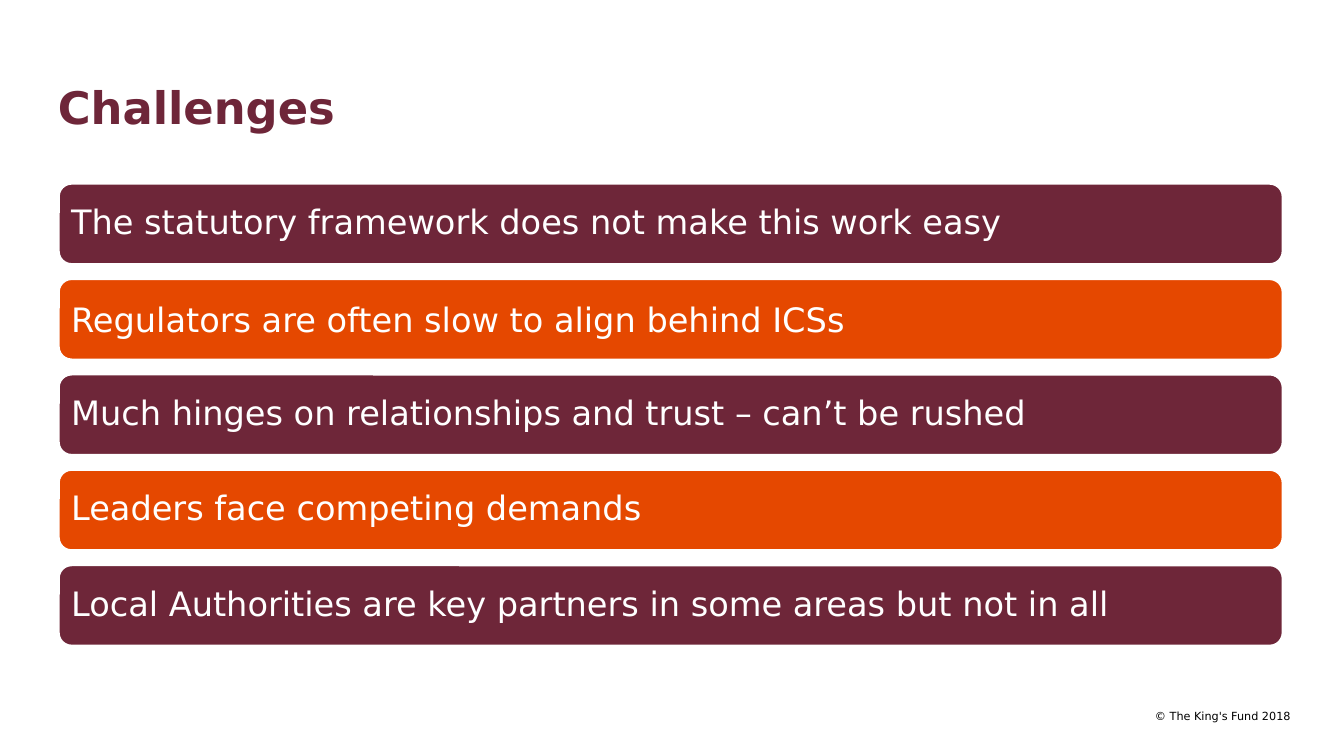
"""Build the Challenges slide with five alternating bars."""
from pptx import Presentation
from pptx.dml.color import RGBColor
from pptx.enum.shapes import MSO_SHAPE
from pptx.enum.text import MSO_ANCHOR, MSO_AUTO_SIZE, PP_ALIGN
from pptx.util import Pt

ROUND = MSO_SHAPE.ROUNDED_RECTANGLE
MIDDLE, TOP = MSO_ANCHOR.MIDDLE, MSO_ANCHOR.TOP
LEFT, RIGHT = PP_ALIGN.LEFT, PP_ALIGN.RIGHT
FIXED = MSO_AUTO_SIZE.NONE
PLUM, ORANGE, WHITE, BLACK = "6E2639", "E54800", "FFFFFF", "000000"
ITEMS = [
    "The statutory framework does not make this work easy",
    "Regulators are often slow to align behind ICSs",
    "Much hinges on relationships and trust – can’t be rushed",
    "Leaders face competing demands",
    "Local Authorities are key partners in some areas but not in all",
]


def color(code):
    return RGBColor.from_string(code)


def write(shape, text, *, size, ink, bold=False, align=LEFT, anchor=MIDDLE,
          pad=(0, 0), lead=None, wrap=True):
    frame = shape.text_frame
    frame.auto_size = FIXED
    frame.word_wrap = wrap
    frame.vertical_anchor = anchor
    frame.margin_left = frame.margin_right = Pt(pad[0])
    frame.margin_top = frame.margin_bottom = Pt(pad[1])
    para = frame.paragraphs[0]
    para.alignment = align
    para.line_spacing = lead
    run = para.add_run()
    run.text = text
    font = run.font
    font.name, font.size, font.bold = "DejaVu Sans", Pt(size), bold
    font.color.rgb = color(ink)


class Deck:
    def __init__(self):
        self.prs = Presentation()
        self.prs.slide_width, self.prs.slide_height = Pt(720), Pt(405)
        self.slide = self.prs.slides.add_slide(self.prs.slide_layouts[5])

    def title(self, text, x, y, w, h):
        shape = self.slide.shapes.title
        shape.left, shape.top, shape.width, shape.height = map(Pt, (x, y, w, h))
        write(shape, text, size=24, ink=PLUM, bold=True)

    def bar(self, text, fill, lead, x, y, w, h):
        shape = self.slide.shapes.add_shape(ROUND, *map(Pt, (x, y, w, h)))
        shape.shadow.inherit = False
        shape.fill.solid()
        shape.fill.fore_color.rgb = color(fill)
        shape.line.color.rgb = color(WHITE)
        shape.line.width = Pt(2)
        write(shape, text, size=18, ink=WHITE, pad=(5, 5), lead=lead)

    def note(self, text, x, y, w, h):
        box = self.slide.shapes.add_textbox(*map(Pt, (x, y, w, h)))
        write(box, text, size=6, ink=BLACK, align=RIGHT, anchor=TOP,
              pad=(7.2, 3.6), wrap=False)


def main():
    deck = Deck()
    deck.title("Challenges", 31, 31, 658, 52.5)
    for row, text in enumerate(ITEMS):
        fill = ORANGE if row % 2 else PLUM
        lead = 1.0 if row == 1 else 0.9
        deck.bar(text, fill, lead, 31, 98 + 51.1 * row, 656.6, 44)
    deck.note("© The King's Fund 2018", 609, 376.6, 89.4, 14.4)
    deck.prs.save("out.pptx")


if __name__ == "__main__":
    main()
